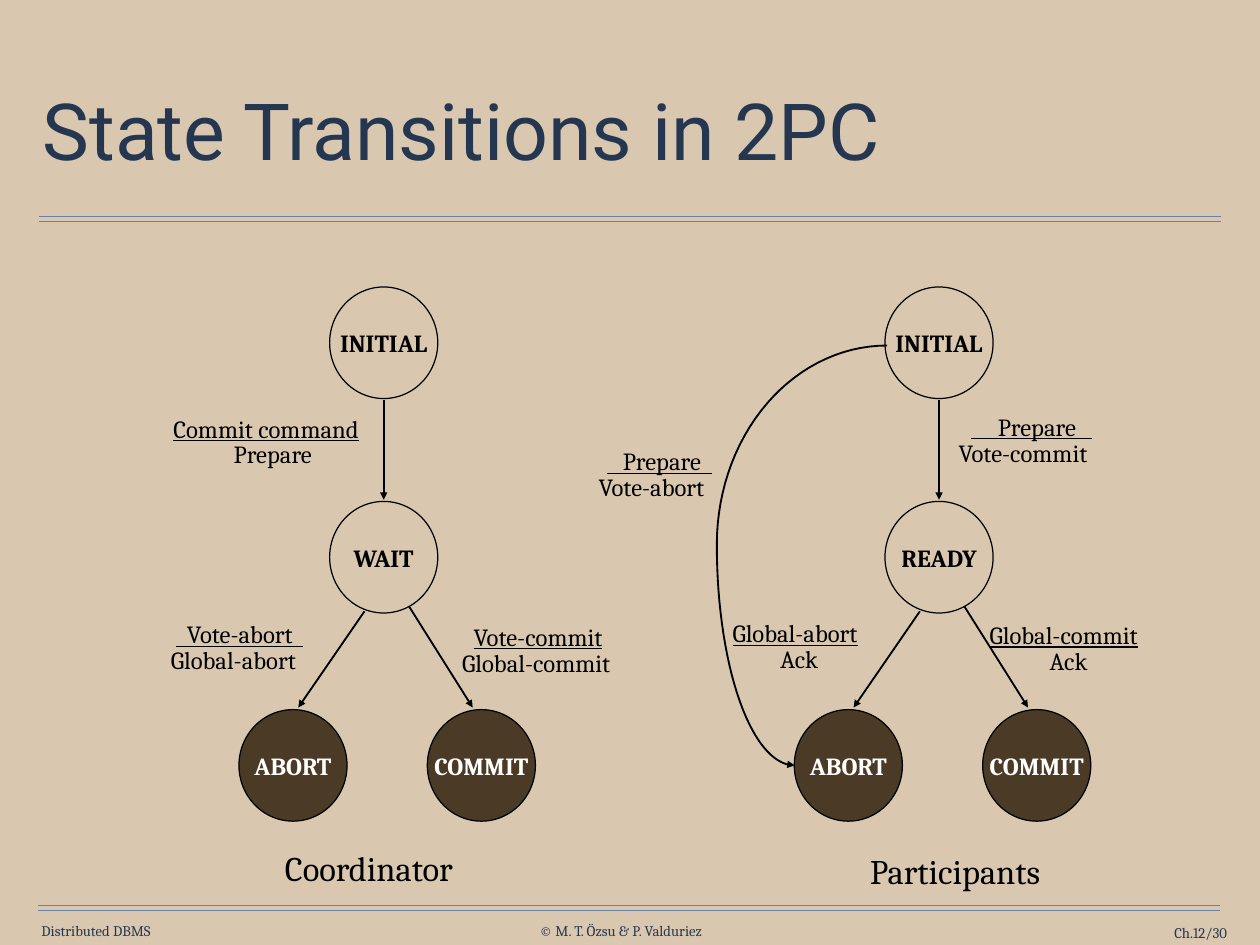
from math import cos, pi, sin

from lxml.etree import SubElement
from pptx import Presentation
from pptx.dml.color import RGBColor
from pptx.enum.shapes import MSO_CONNECTOR, MSO_SHAPE
from pptx.enum.text import MSO_ANCHOR, PP_ALIGN
from pptx.oxml.ns import qn
from pptx.util import Cm, Pt

# Content; all lengths in cm
COLORS = {"sand": "D9C8AF", "brown": "4A3A26", "navy": "253750",
          "rule": "6682AA", "black": "000000", "white": "FFFFFF"}
TITLE = "State Transitions in 2PC"

# Axis x, name of the middle state
MACHINES = [(11.0, "WAIT"), (26.92, "READY")]

# Trigger left, top, width, text; then action left, width, text
TRANSITIONS = [
    ((4.62, 11.68, 6.68, "Commit command"), (6.35, 3.25, "Prepare")),
    ((4.7, 17.58, 4.39, "  Vote-abort  "), (4.55, 4.7, "Global-abort")),
    ((13.23, 17.65, 4.83, "Vote-commit"), (12.9, 5.46, "Global-commit")),
    ((27.48, 11.63, 4.3, "     Prepare   "), (27.13, 4.78, "Vote-commit")),
    ((17.04, 12.62, 3.8, "   Prepare   "), (16.81, 4.04, "Vote-abort")),
    ((20.65, 17.55, 4.7, "Global-abort"), (22.02, 1.98, "Ack")),
    ((28.02, 17.6, 5.46, "Global-commit"), (29.74, 1.98, "Ack")),
]
CAPTIONS = [(7.82, 24.1, 6.15, "Coordinator"), (24.59, 24.21, 6.0, "Participants")]
FOOTERS = [(1.19, 26.44, 3.6, "Distributed DBMS", PP_ALIGN.LEFT),
           (15.47, 26.44, 5.28, "© M. T. Özsu & P. Valduriez", PP_ALIGN.LEFT),
           (31.27, 26.49, 3.91, "Ch.12/30", PP_ALIGN.RIGHT)]
RULES = [(1.12, 6.2), (1.09, 25.96)]

# Layout rules
RULE_W, RULE_GAP = 33.88, 0.15
STATE_W, STATE_H = 3.1, 3.2
TOP_Y, MID_Y, END_Y = 9.83, 15.98, 21.95
ABORT_DX, COMMIT_DX = -2.6, 2.8
LINE_STEP = 0.74
# Arrows as (dx, y) from and to, relative to the machine's axis
ARROWS = [((0, 11.46), (0, 14.33)),
          ((-0.55, 17.53), (-2.45, 20.29)),
          ((0.7, 17.35), (2.55, 20.29))]


def rgb(name):
    return RGBColor.from_string(COLORS[name])


def style(p, size, color="black", font="Cambria", bold=False, underline=False):
    for r in p.runs:
        r.font.size, r.font.name = Pt(size), font
        r.font.bold, r.font.underline = bold, underline
        r.font.color.rgb = rgb(color)


def add_arrowhead(sp):
    SubElement(sp.line._get_or_add_ln(), qn("a:tailEnd"), type="triangle")


def add_line(x1, y1, x2, y2, color, width):
    sp = s.shapes.add_connector(MSO_CONNECTOR.STRAIGHT, Cm(x1), Cm(y1), Cm(x2), Cm(y2))
    sp.line.color.rgb, sp.line.width = rgb(color), Pt(width)
    SubElement(sp._element.spPr, qn("a:effectLst"))
    return sp


def add_text(x, y, w, h, text, size, inset=(0.35, 0.18), color="black",
             align=PP_ALIGN.LEFT, underline=False):
    tf = s.shapes.add_textbox(Cm(x), Cm(y), Cm(w), Cm(h)).text_frame
    tf.word_wrap = True
    tf.margin_left = tf.margin_right = Cm(inset[0])
    tf.margin_top = tf.margin_bottom = Cm(inset[1])
    p = tf.paragraphs[0]
    p.text, p.alignment = text, align
    style(p, size, color, underline=underline)
    return tf


def add_state(x, y, name, fill, color):
    sp = s.shapes.add_shape(MSO_SHAPE.OVAL, Cm(x - STATE_W / 2), Cm(y - STATE_H / 2),
                            Cm(STATE_W), Cm(STATE_H))
    sp.shadow.inherit = False
    sp.fill.solid()
    sp.fill.fore_color.rgb = rgb(fill)
    sp.line.color.rgb, sp.line.width = rgb("black"), Pt(1)
    tf = sp.text_frame
    tf.word_wrap, tf.vertical_anchor = False, MSO_ANCHOR.MIDDLE
    p = tf.paragraphs[0]
    p.text, p.alignment = name, PP_ALIGN.CENTER
    style(p, 20, color, bold=True)


def quarter(cx, cy, rx, ry, start, steps=30):
    angles = [start + pi / 2 * i / steps for i in range(steps + 1)]
    return [(Cm(cx + rx * cos(a)), Cm(cy - ry * sin(a))) for a in angles]


prs = Presentation()
prs.slide_width, prs.slide_height = Cm(36.12), Cm(27.1)
s = prs.slides.add_slide(prs.slide_layouts[5])
s.background.fill.solid()
s.background.fill.fore_color.rgb = rgb("sand")

# Double rules and footer
for x, y in RULES:
    for line_y in (y, y + RULE_GAP):
        add_line(x, line_y, x + RULE_W, line_y, "rule", 1)
for x, y, w, text, align in FOOTERS:
    tf = add_text(x, y, w, 0.51, text, 12, (0, 0), "navy", align)
    tf.vertical_anchor = MSO_ANCHOR.MIDDLE

# Title
title = s.shapes.title
title.left, title.top, title.width, title.height = Cm(1.07), Cm(2.92), Cm(27.58), Cm(1.93)
tf = title.text_frame
tf.text, tf.vertical_anchor = TITLE, MSO_ANCHOR.MIDDLE
tf.margin_left = tf.margin_right = tf.margin_top = tf.margin_bottom = Cm(0.15)
p = tf.paragraphs[0]
p.alignment, p.line_spacing = PP_ALIGN.LEFT, 0.9
style(p, 64, "navy", "Roboto")

# State machines
for axis, middle in MACHINES:
    for (dx1, y1), (dx2, y2) in ARROWS:
        add_arrowhead(add_line(axis + dx1, y1, axis + dx2, y2, "black", 1.5))
    add_state(axis, TOP_Y, "INITIAL", "sand", "black")
    add_state(axis, MID_Y, middle, "sand", "black")
    add_state(axis + ABORT_DX, END_Y, "ABORT", "brown", "white")
    add_state(axis + COMMIT_DX, END_Y, "COMMIT", "brown", "white")

# Curved arrow from the participant's INITIAL to ABORT
curve = (quarter(25.43, 15.62, 4.88, 5.71, pi / 2)
         + quarter(22.78, 15.62, 2.23, 6.33, pi)[1:])
builder = s.shapes.build_freeform(*curve[0])
builder.add_line_segments(curve[1:], close=False)
sp = builder.convert_to_shape()
sp.shadow.inherit = False
sp.fill.background()
sp.line.color.rgb, sp.line.width = rgb("black"), Pt(1.5)
add_arrowhead(sp)

# Transition labels: underlined trigger above its action
for (x, y, w, trigger), (action_x, action_w, action) in TRANSITIONS:
    add_text(x, y, w, 1.22, trigger, 20, underline=True)
    add_text(action_x, y + LINE_STEP, action_w, 1.22, action, 20)

for x, y, w, text in CAPTIONS:
    add_text(x, y, w, 1.55, text, 28)

prs.save("out.pptx")
